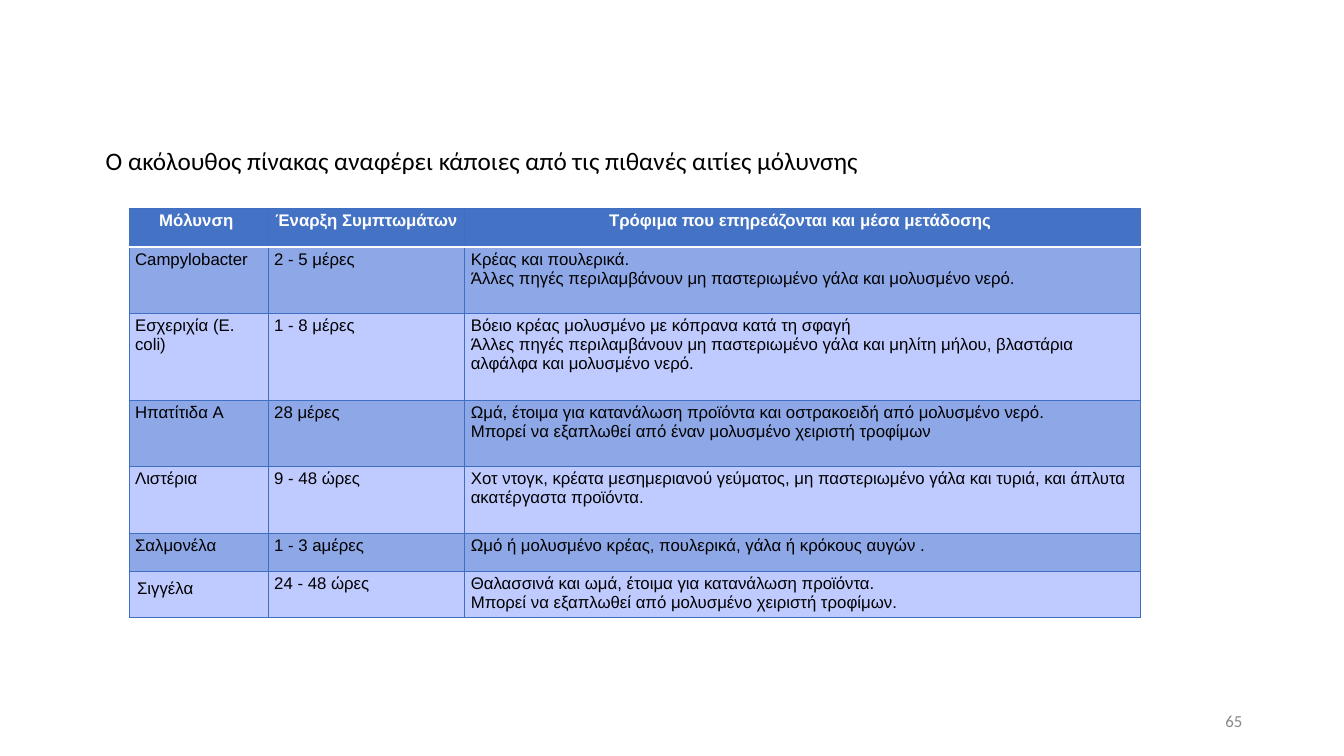
from lxml import etree
from pptx import Presentation
from pptx.dml.color import RGBColor
from pptx.enum import text
from pptx.oxml import ns
from pptx.util import Inches, Pt

COLORS = {
    "black": "000000",
    "white": "FFFFFF",
    "gray": "888888",
    "head": "4472C4",
    "dark": "8EA7E7",
    "light": "BFCBFF",
    "line": "3F6FC3",
}
WIDTHS = [1.38, 1.95, 6.7]
HEIGHTS = [0.38, 0.66, 0.86, 0.66, 0.66, 0.38, 0.46]
ROWS = [
    ["Μόλυνση ", "Έναρξη Συμπτωμάτων", "Τρόφιμα που επηρεάζονται και μέσα μετάδοσης "],
    ["Campylobacter", "2 - 5 μέρες",
     "Κρέας και πουλερικά.\n"
     "Άλλες πηγές περιλαμβάνουν μη παστεριωμένο γάλα και μολυσμένο νερό."],
    ["Εσχεριχία (E. coli)", "1 - 8 μέρες",
     "Βόειο κρέας μολυσμένο με κόπρανα κατά τη σφαγή\n"
     "Άλλες πηγές περιλαμβάνουν μη παστεριωμένο γάλα και μηλίτη μήλου, "
     "βλαστάρια αλφάλφα και μολυσμένο νερό."],
    ["Ηπατίτιδα A", "28 μέρες",
     "Ωμά, έτοιμα για κατανάλωση προϊόντα και οστρακοειδή από μολυσμένο νερό.\n"
     "Μπορεί να εξαπλωθεί από έναν μολυσμένο χειριστή τροφίμων"],
    ["Λιστέρια", "9 - 48 ώρες",
     "Χοτ ντογκ, κρέατα μεσημεριανού γεύματος, μη παστεριωμένο γάλα και τυριά, "
     "και άπλυτα ακατέργαστα προϊόντα."],
    ["Σαλμονέλα", "1 - 3 aμέρες",
     "Ωμό ή μολυσμένο κρέας, πουλερικά, γάλα ή κρόκους αυγών ."],
    ["Σιγγέλα", "24 - 48 ώρες",
     "Θαλασσινά και ωμά, έτοιμα για κατανάλωση προϊόντα.\n"
     "Μπορεί να εξαπλωθεί από μολυσμένο χειριστή τροφίμων."],
]


def rgb(name):
    return RGBColor.from_string(COLORS[name])


def style(frame, face, size, color, align, bold=False):
    for par in frame.paragraphs:
        par.alignment = align
        par.font.name = face
        par.font.size = Pt(size)
        par.font.bold = bold
        par.font.color.rgb = rgb(color)


def add_text(slide, box, words, size, color, align, anchor):
    frame = slide.shapes.add_textbox(*map(Inches, box)).text_frame
    frame.word_wrap = True
    frame.vertical_anchor = anchor
    frame.text = words
    style(frame, "Calibri", size, color, align)


def add_edge(cell, index, side, color, width):
    line = etree.Element(ns.qn(f"a:ln{side}"), w=str(Pt(width)))
    fill = etree.SubElement(line, ns.qn("a:solidFill"))
    etree.SubElement(fill, ns.qn("a:srgbClr"), val=COLORS[color])
    cell._tc.get_or_add_tcPr().insert(index, line)


def fill_cell(cell, words, row):
    head = row == 0
    cell.text = words
    cell.margin_left = cell.margin_right = Inches(0.06)
    cell.margin_top = cell.margin_bottom = Inches(0.03)
    cell.fill.solid()
    cell.fill.fore_color.rgb = rgb("head" if head else "dark" if row % 2 else "light")
    align = text.PP_ALIGN.CENTER if head else text.PP_ALIGN.LEFT
    style(cell.text_frame, "Arial", 12, "white" if head else "black", align, head)
    for index, side in enumerate("LRTB"):
        rule = (head and side == "B") or (row == 1 and side == "T")
        add_edge(cell, index, side, *(("white", 2) if rule else ("line", 0.75)))


def add_grid(slide, left, top):
    frame = slide.shapes.add_table(
        len(ROWS), len(WIDTHS), Inches(left), Inches(top),
        Inches(sum(WIDTHS)), Inches(sum(HEIGHTS)))
    table = frame.table
    for col, width in zip(table.columns, WIDTHS):
        col.width = Inches(width)
    for row, height in enumerate(HEIGHTS):
        table.rows[row].height = Inches(height)
        for col, words in enumerate(ROWS[row]):
            fill_cell(table.cell(row, col), words, row)
    last = table.cell(len(ROWS) - 1, 0)
    last.margin_left = last.margin_right = Inches(0.08)
    last.margin_top = last.margin_bottom = Inches(0.08)


def main():
    deck = Presentation()
    deck.slide_width, deck.slide_height = Inches(13.33), Inches(7.5)
    slide = deck.slides.add_slide(deck.slide_layouts[6])
    add_text(slide, (0.95, 1.39, 10.19, 1.31),
             "Ο ακόλουθος πίνακας αναφέρει κάποιες από τις πιθανές αιτίες μόλυνσης",
             18, "black", text.PP_ALIGN.LEFT, text.MSO_ANCHOR.TOP)
    add_grid(slide, 1.28, 2.07)
    add_text(slide, (9.42, 6.95, 3, 0.4), "65", 12, "gray",
             text.PP_ALIGN.RIGHT, text.MSO_ANCHOR.MIDDLE)
    deck.save("out.pptx")


if __name__ == "__main__":
    main()
